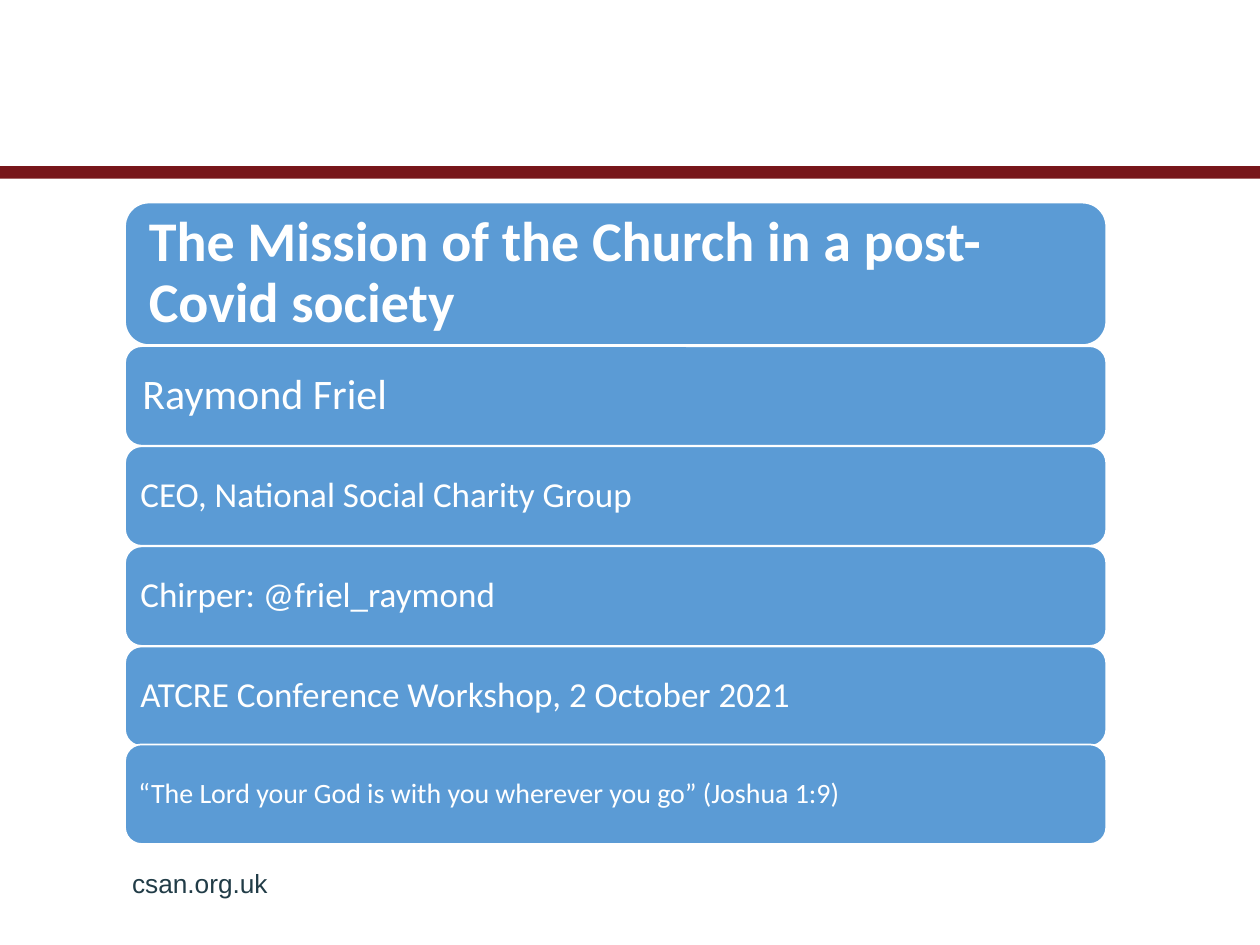
from dataclasses import dataclass

from pptx import Presentation
from pptx.dml.color import RGBColor
from pptx.enum.shapes import MSO_SHAPE
from pptx.enum.text import MSO_ANCHOR, PP_ALIGN
from pptx.util import Pt

RECT, ROUND_RECT = MSO_SHAPE.RECTANGLE, MSO_SHAPE.ROUNDED_RECTANGLE
MIDDLE, LEFT = MSO_ANCHOR.MIDDLE, PP_ALIGN.LEFT


@dataclass(frozen=True)
class Theme:
    rule: str = "77161A"
    panel: str = "5B9BD5"
    white: str = "FFFFFF"
    footer: str = "213C47"
    body_font: str = "Calibri"
    footer_font: str = "Arial"
    title_size: int = 32
    name_size: int = 24
    detail_size: int = 20
    quote_size: int = 16
    footer_size: int = 15


THEME = Theme()

# Text, size, height and gap above each panel
PANELS = [
    ("The Mission of the Church in a post-Covid society", THEME.title_size, 81.4, 0),
    ("Raymond Friel", THEME.name_size, 56.9, 0.6),
    ("CEO, National Social Charity Group", THEME.detail_size, 56.9, 0.3),
    ("Chirper: @friel_raymond", THEME.detail_size, 56.9, 0.3),
    ("ATCRE Conference Workshop, 2 October 2021", THEME.detail_size, 56.9, 0.3),
    ("“The Lord your God is with you wherever you go” (Joshua 1:9)",
     THEME.quote_size, 56.9, -0.9),
]


def write(tf, text, *, size, font, color, bold=False, spacing=1.0):
    p = tf.paragraphs[0]
    p.alignment = LEFT
    p.line_spacing = spacing
    r = p.add_run()
    r.text = text
    r.font.size = Pt(size)
    r.font.name = font
    r.font.bold = bold
    r.font.color.rgb = RGBColor.from_string(color)


def add_box(slide, kind, left, top, width, height, fill, line=None):
    sp = slide.shapes.add_shape(kind, Pt(left), Pt(top), Pt(width), Pt(height))
    sp.shadow.inherit = False
    sp.fill.solid()
    sp.fill.fore_color.rgb = RGBColor.from_string(fill)
    if line:
        sp.line.color.rgb = RGBColor.from_string(line)
        sp.line.width = Pt(1)
    else:
        sp.line.fill.background()
    return sp


def add_rule(slide, left, top, width, height):
    add_box(slide, RECT, left, top, width, height, THEME.rule)


def add_panels(slide, left, top, width):
    for i, (text, size, height, gap) in enumerate(PANELS):
        top += gap
        sp = add_box(slide, ROUND_RECT, left, top, width, height,
                     THEME.panel, THEME.white)
        tf = sp.text_frame
        tf.word_wrap = True
        tf.vertical_anchor = MIDDLE
        # Insets grow with the type size
        inset = Pt(0.3 * size)
        tf.margin_left = tf.margin_right = inset
        tf.margin_top = tf.margin_bottom = inset
        write(tf, text, size=size, font=THEME.body_font, color=THEME.white,
              bold=i == 0, spacing=0.9)
        top += height


def add_footer(slide, left, top, width, height):
    sp = slide.shapes.add_textbox(Pt(left), Pt(top), Pt(width), Pt(height))
    tf = sp.text_frame
    tf.word_wrap = True
    write(tf, "csan.org.uk", size=THEME.footer_size, font=THEME.footer_font,
          color=THEME.footer)


def main():
    prs = Presentation()
    prs.slide_width, prs.slide_height = Pt(720), Pt(540)
    slide = prs.slides.add_slide(prs.slide_layouts[6])
    add_footer(slide, 68.4, 491.8, 96.5, 20.2)
    add_rule(slide, 0, 95, 720, 7.2)
    add_panels(slide, 71.5, 115.8, 560.7)
    prs.save("out.pptx")


if __name__ == "__main__":
    main()
